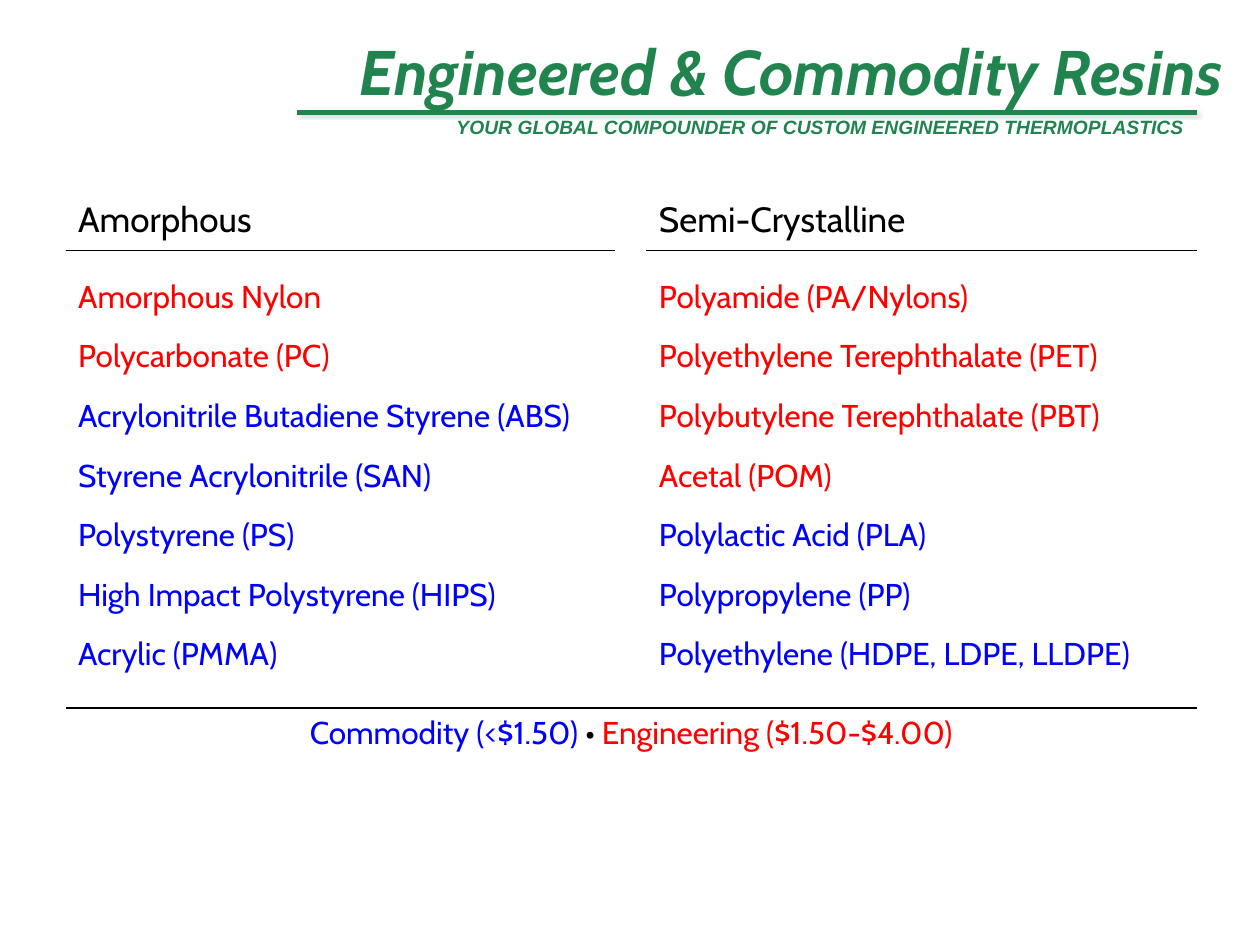
from dataclasses import dataclass

from lxml import etree
from pptx import Presentation
from pptx import util as u
from pptx.dml.color import RGBColor
from pptx.enum import shapes, text
from pptx.oxml import parse_xml
from pptx.oxml.ns import nsdecls, qn


@dataclass(frozen=True)
class Theme:
    green: str = "21834E"
    black: str = "000000"
    engineering: str = "FF0000"
    commodity: str = "0000FF"
    shadow: str = "808080"
    body_font: str = "Cabin"
    tagline_font: str = "Arial"
    title_size: int = 36
    header_size: int = 20
    body_size: int = 18
    tagline_size: int = 11
    rule_width: int = 3
    border_width: int = 1


@dataclass(frozen=True)
class ResinFamily:
    column: int
    heading: str
    engineering: list[str]
    commodity: list[str]


THEME = Theme()
WIDTH, HEIGHT = u.Inches(10), u.Inches(7.5)
RIGHT = 0.95  # right edge of the content, as a share of the width
RULE_LEFT, RULE_TOP = 0.236, 0.119
COLUMNS = (0.436, 0.025, 0.437)  # shares of the width
ROWS = (0.061, 0.484, 0.135)  # shares of the height

FAMILIES = [
    ResinFamily(0, "Amorphous",
                ["Amorphous Nylon", "Polycarbonate (PC)"],
                ["Acrylonitrile Butadiene Styrene (ABS)",
                 "Styrene Acrylonitrile (SAN)", "Polystyrene (PS)",
                 "High Impact Polystyrene (HIPS)", "Acrylic (PMMA)"]),
    ResinFamily(2, "Semi-Crystalline",
                ["Polyamide (PA/Nylons)", "Polyethylene Terephthalate (PET)",
                 "Polybutylene Terephthalate (PBT)", "Acetal (POM)"],
                ["Polylactic Acid (PLA)", "Polypropylene (PP)",
                 "Polyethylene (HDPE, LDPE, LLDPE)"]),
]


def across(share: float) -> int:
    return round(WIDTH * share)


def down(share: float) -> int:
    return round(HEIGHT * share)


def write(frame, paragraphs, *, size=THEME.body_size, font=THEME.body_font,
          align=text.PP_ALIGN.LEFT, spacing=1.0, bold=False, italic=False):
    """Fill a text frame; each paragraph is a list of (words, colour) runs."""
    for index, runs in enumerate(paragraphs):
        paragraph = frame.add_paragraph() if index else frame.paragraphs[0]
        paragraph.alignment, paragraph.line_spacing = align, spacing
        for words, color in runs:
            run = paragraph.add_run()
            run.text = words
            run.font.name, run.font.size = font, u.Pt(size)
            run.font.bold, run.font.italic = bold, italic
            run.font.color.rgb = RGBColor.from_string(color)


def add_text(slide, left: float, top: float, width: float, height: float,
             paragraphs, anchor=text.MSO_ANCHOR.TOP, **style):
    box = slide.shapes.add_textbox(across(left), down(top),
                                   across(width), down(height))
    box.text_frame.word_wrap = True
    box.text_frame.vertical_anchor = anchor
    write(box.text_frame, paragraphs, **style)


def add_rule(slide, shadowed: bool) -> None:
    rule = slide.shapes.add_connector(
        shapes.MSO_CONNECTOR.STRAIGHT, across(RULE_LEFT), down(RULE_TOP),
        across(RIGHT), down(RULE_TOP))
    rule.line.width = u.Pt(THEME.rule_width)
    rule.line.color.rgb = RGBColor.from_string(THEME.green)
    effects = etree.SubElement(rule._element.spPr, qn("a:effectLst"))
    if shadowed:
        effects.append(parse_xml(
            f'<a:outerShdw {nsdecls("a")} blurRad="{u.Pt(2)}" dist="{u.Pt(1)}" '
            f'dir="{45 * 60000}"><a:srgbClr val="{THEME.shadow}">'
            '<a:alpha val="25000"/></a:srgbClr></a:outerShdw>'))


def set_borders(cell, sides: str) -> None:
    """Draw the listed sides (of L, R, T, B) and hide the others."""
    cell.fill.background()
    solid = f'<a:solidFill><a:srgbClr val="{THEME.black}"/></a:solidFill>'
    for index, side in enumerate("LRTB"):
        paint = solid if side in sides else "<a:noFill/>"
        cell._tc.get_or_add_tcPr().insert(index, parse_xml(
            f'<a:ln{side} {nsdecls("a")} w="{u.Pt(THEME.border_width)}">'
            f'{paint}</a:ln{side}>'))


def add_resin_table(slide) -> None:
    table = slide.shapes.add_table(
        len(ROWS), len(COLUMNS), across(0.052), down(0.204),
        across(sum(COLUMNS)), down(sum(ROWS))).table
    table.first_row = table.horz_banding = False
    for column, share in zip(table.columns, COLUMNS):
        column.width = across(share)
    for row, share in zip(table.rows, ROWS):
        row.height = down(share)

    # Borders: the gap column has no line under the headings
    for row, sides in enumerate([("B", "", "B"), ("TB", "B", "TB"), "TTT"]):
        for column, drawn in enumerate(sides):
            set_borders(table.cell(row, column), drawn)

    # One column for each resin family
    for family in FAMILIES:
        write(table.cell(0, family.column).text_frame,
              [[(family.heading, THEME.black)]], size=THEME.header_size)
        resins = ([[(name, THEME.engineering)] for name in family.engineering]
                  + [[(name, THEME.commodity)] for name in family.commodity])
        write(table.cell(1, family.column).text_frame, resins, spacing=1.55)

    # Price key
    key = table.cell(2, 0)
    key.merge(table.cell(2, 2))
    write(key.text_frame, [[(" Commodity (<$1.50) ", THEME.commodity),
                            ("• ", THEME.black),
                            ("Engineering ($1.50-$4.00) ", THEME.engineering)]],
          align=text.PP_ALIGN.CENTER)


def main() -> None:
    deck = Presentation()
    deck.slide_width, deck.slide_height = WIDTH, HEIGHT
    slide = deck.slides.add_slide(deck.slide_layouts[6])

    # Heading with its rule and tagline
    for shadowed in (False, True):
        add_rule(slide, shadowed)
    heading_style = dict(align=text.PP_ALIGN.RIGHT, bold=True, italic=True)
    add_text(slide, RULE_LEFT, 0.115, RIGHT - RULE_LEFT, 0.039,
             [[("YOUR GLOBAL COMPOUNDER OF CUSTOM ENGINEERED THERMOPLASTICS",
                THEME.green)]],
             size=THEME.tagline_size, font=THEME.tagline_font, **heading_style)
    add_text(slide, 0.03, 0, 0.95, 0.12,
             [[("Engineered & Commodity Resins", THEME.green)]],
             anchor=text.MSO_ANCHOR.BOTTOM, size=THEME.title_size,
             spacing=0.8, **heading_style)

    add_resin_table(slide)
    deck.save("out.pptx")


if __name__ == "__main__":
    main()
